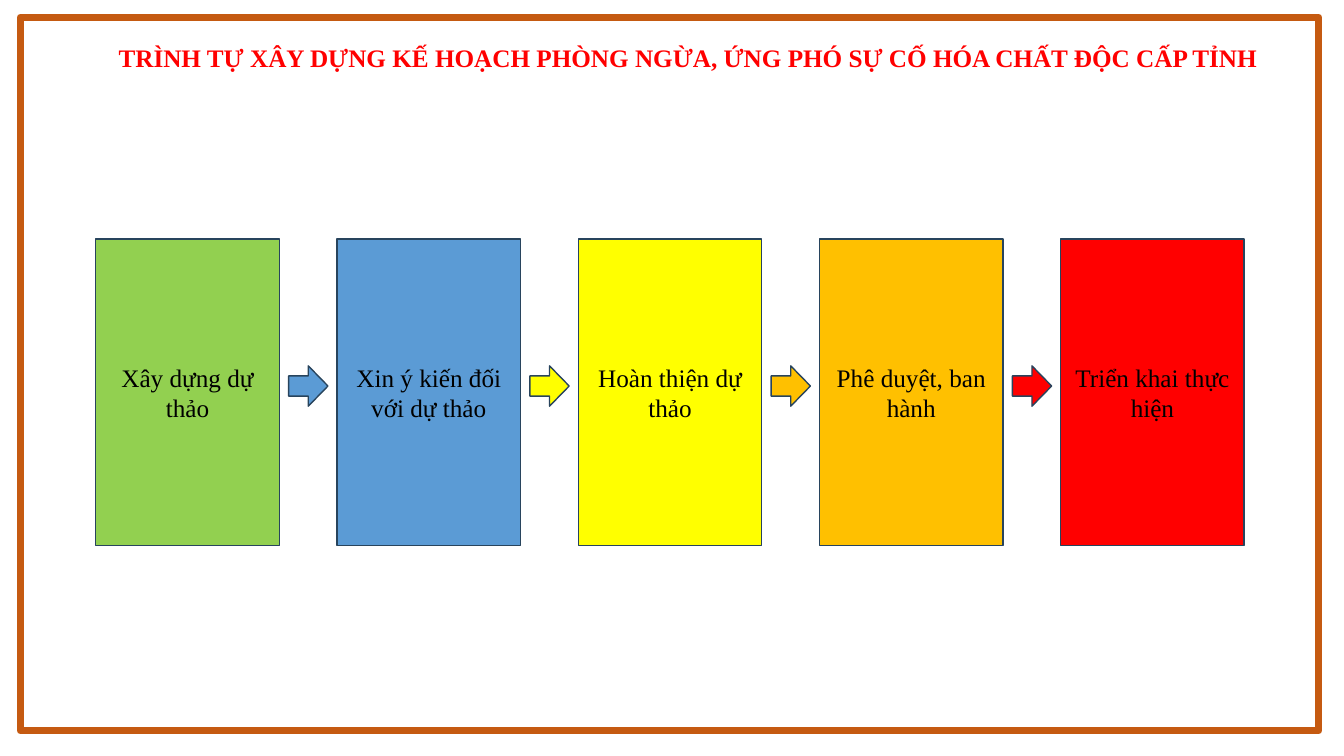
from pptx import Presentation
from pptx.dml.color import RGBColor
from pptx.enum import shapes, text
from pptx.util import Inches, Pt

COLORS = {
    "frame": "C55A11",
    "edge": "28445D",
    "title": "FF0000",
    "ink": "000000",
    "green": "92D050",
    "blue": "5B9BD5",
    "yellow": "FFFF00",
    "orange": "FFC000",
    "red": "FF0000",
}
FONT = "Times New Roman"
STEPS = [
    ("Xây dựng dự thảo", "green"),
    ("Xin ý kiến đối với dự thảo", "blue"),
    ("Hoàn thiện dự thảo", "yellow"),
    ("Phê duyệt, ban hành", "orange"),
    ("Triển khai thực hiện", "red"),
]
RECT = shapes.MSO_SHAPE.RECTANGLE
ARROW = shapes.MSO_SHAPE.RIGHT_ARROW


def rgb(name):
    return RGBColor.from_string(COLORS[name])


def write(shape, words, size=18, color="ink", bold=False, wrap=True):
    frame = shape.text_frame
    frame.word_wrap = wrap
    frame.vertical_anchor = text.MSO_ANCHOR.MIDDLE
    para = frame.paragraphs[0]
    para.alignment = text.PP_ALIGN.CENTER
    run = para.add_run()
    run.text = words
    run.font.name = FONT
    run.font.size = Pt(size)
    run.font.bold = bold
    run.font.color.rgb = rgb(color)


def draw(slide, kind, box, fill=None, line="edge", width=1):
    """Add a preset shape; without a fill it is only an outline."""
    shape = slide.shapes.add_shape(kind, *map(Inches, box))
    shape.shadow.inherit = False
    if fill:
        shape.fill.solid()
        shape.fill.fore_color.rgb = rgb(fill)
    else:
        shape.fill.background()
    shape.line.color.rgb = rgb(line)
    shape.line.width = Pt(width)
    return shape


def add_title(slide, box):
    label = slide.shapes.add_textbox(*map(Inches, box))
    write(label, "TRÌNH TỰ XÂY DỰNG KẾ HOẠCH PHÒNG NGỪA, ỨNG PHÓ SỰ CỐ "
          "HÓA CHẤT ĐỘC CẤP TỈNH", color="title", bold=True, wrap=False)
    label.text_frame.auto_size = text.MSO_AUTO_SIZE.SHAPE_TO_FIT_TEXT


def add_flow(slide, box):
    """Spread the steps over the box, each led in by an arrow of its colour."""
    left, top, width, height = box
    card, tip, tall, gap = 1.82, 0.39, 0.4, 0.09
    pitch = (width - card) / (len(STEPS) - 1)
    for i, (words, fill) in enumerate(STEPS):
        x = left + i * pitch
        write(draw(slide, RECT, (x, top, card, height), fill), words)
        if i:
            draw(slide, ARROW, (x - gap - tip, top + 1.26, tip, tall), fill)


def main():
    deck = Presentation()
    deck.slide_width = Inches(13.33)
    deck.slide_height = Inches(7.5)
    slide = deck.slides.add_slide(deck.slide_layouts[6])
    draw(slide, RECT, (0.2, 0.17, 12.88, 7.08), line="frame", width=5)
    add_flow(slide, (0.95, 2.37, 11.39, 3.04))
    add_title(slide, (1.02, 0.37, 11.61, 0.4))
    deck.save("out.pptx")


if __name__ == "__main__":
    main()
